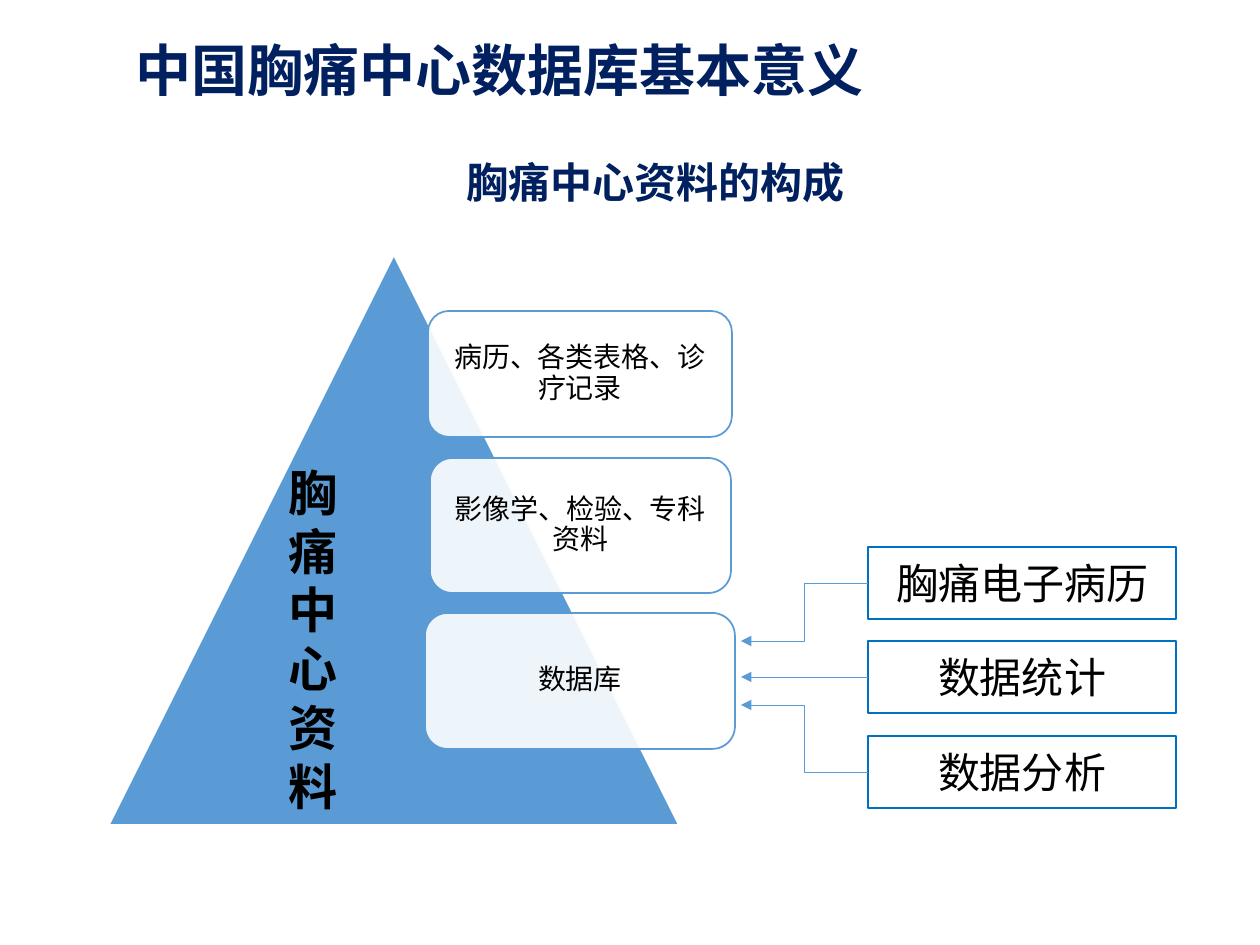
from lxml.etree import SubElement
from pptx import Presentation
from pptx.dml.color import RGBColor
from pptx.enum.shapes import MSO_CONNECTOR as LINK, MSO_SHAPE as FORM
from pptx.enum.text import MSO_ANCHOR as ANCHOR, MSO_AUTO_SIZE as FIT, PP_ALIGN as ALIGN
from pptx.oxml.ns import qn
from pptx.util import Pt

TITLE = "中国胸痛中心数据库基本意义"
HEAD = "胸痛中心资料的构成"
SIDE = "胸痛中心资料"
PARTS = [  # text, (left, top, width, height)
    ("病历、各类表格、诊疗记录", (428, 311, 304, 126)),
    ("影像学、检验、专科资料", (430, 458, 301, 135)),
    ("数据库", (425, 613, 310, 136)),
]
USES = [  # text, top, arrow kind, arrow tip height
    ("胸痛电子病历", 547, LINK.ELBOW, 641),
    ("数据统计", 641, LINK.STRAIGHT, 677),
    ("数据分析", 736, LINK.ELBOW, 705),
]
USE_X, USE_W, USE_H, TIP_X = 868, 308, 72, 741
HEX = {"navy": "002060", "blue": "5B9BD5", "edge": "0070C0",
       "white": "FFFFFF", "black": "000000"}
FONT = "Noto Sans CJK SC"
SCALE = 914400 / 126


def px(*nums):
    return [round(n * SCALE) for n in nums]


def rgb(name):
    return RGBColor.from_string(HEX[name])


def write(shape, text, size, color="black", bold=False, align=ALIGN.LEFT,
          space=None, **frame):
    tf = shape.text_frame
    for key, val in ({"word_wrap": True} | frame).items():
        setattr(tf, key, val)
    para = tf.paragraphs[0]
    para.alignment, para.line_spacing = align, space
    run = para.add_run()
    run.text = text
    for key, val in {"name": FONT, "size": Pt(size), "bold": bold}.items():
        setattr(run.font, key, val)
    run.font.color.rgb = rgb(color)
    SubElement(run.font._element, qn("a:ea"), typeface=FONT)


def draw(form, box, fill, edge, alpha=None):
    shape = slide.shapes.add_shape(form, *px(*box))
    shape.shadow.inherit = False
    shape.fill.solid()
    shape.fill.fore_color.rgb = rgb(fill)
    shape.line.color.rgb = rgb(edge)
    shape.line.width = Pt(1)
    if alpha:
        tone = shape._element.spPr.find(qn("a:solidFill"))[0]
        SubElement(tone, qn("a:alpha"), val=str(alpha * 1000))
    return shape


def arrow(kind, start, end):
    link = slide.shapes.add_connector(kind, *px(*start, *end))
    link.line.color.rgb = rgb("blue")
    link.line.width = Pt(0.5)
    SubElement(link.line._get_or_add_ln(), qn("a:tailEnd"), type="triangle")
    SubElement(link._element.spPr, qn("a:effectLst"))


prs = Presentation()
prs.slide_width, prs.slide_height = px(1260, 945)
slide = prs.slides.add_slide(prs.slide_layouts[5])

title = slide.shapes.title
title.left, title.top, title.width, title.height = px(123, 25, 1033, 96)
write(title, TITLE, 32, "navy", True, space=0.9,
      vertical_anchor=ANCHOR.MIDDLE, auto_size=FIT.NONE)

head = slide.shapes.add_textbox(*px(454, 150, 407, 63))
write(head, HEAD, 24, "navy", True, word_wrap=False,
      auto_size=FIT.SHAPE_TO_FIT_TEXT)

draw(FORM.ISOSCELES_TRIANGLE, (109, 255, 570, 570), "blue", "white")
pad = px(9)[0]
inset = {f"margin_{side}": pad for side in ("left", "right", "top", "bottom")}
for text, box in PARTS:
    part = draw(FORM.ROUNDED_RECTANGLE, box, "white", "blue", 90)
    write(part, text, 16, align=ALIGN.CENTER, space=0.9,
          vertical_anchor=ANCHOR.MIDDLE, **inset)

side = slide.shapes.add_textbox(*px(276, 456, 89, 369))
write(side, SIDE, 28, bold=True, auto_size=FIT.SHAPE_TO_FIT_TEXT)

for text, top, kind, tip in USES:
    use = draw(FORM.RECTANGLE, (USE_X, top, USE_W, USE_H), "white", "edge")
    write(use, text, 24, align=ALIGN.CENTER, vertical_anchor=ANCHOR.MIDDLE)
    arrow(kind, (USE_X, top + USE_H / 2), (TIP_X, tip))

prs.save("out.pptx")
